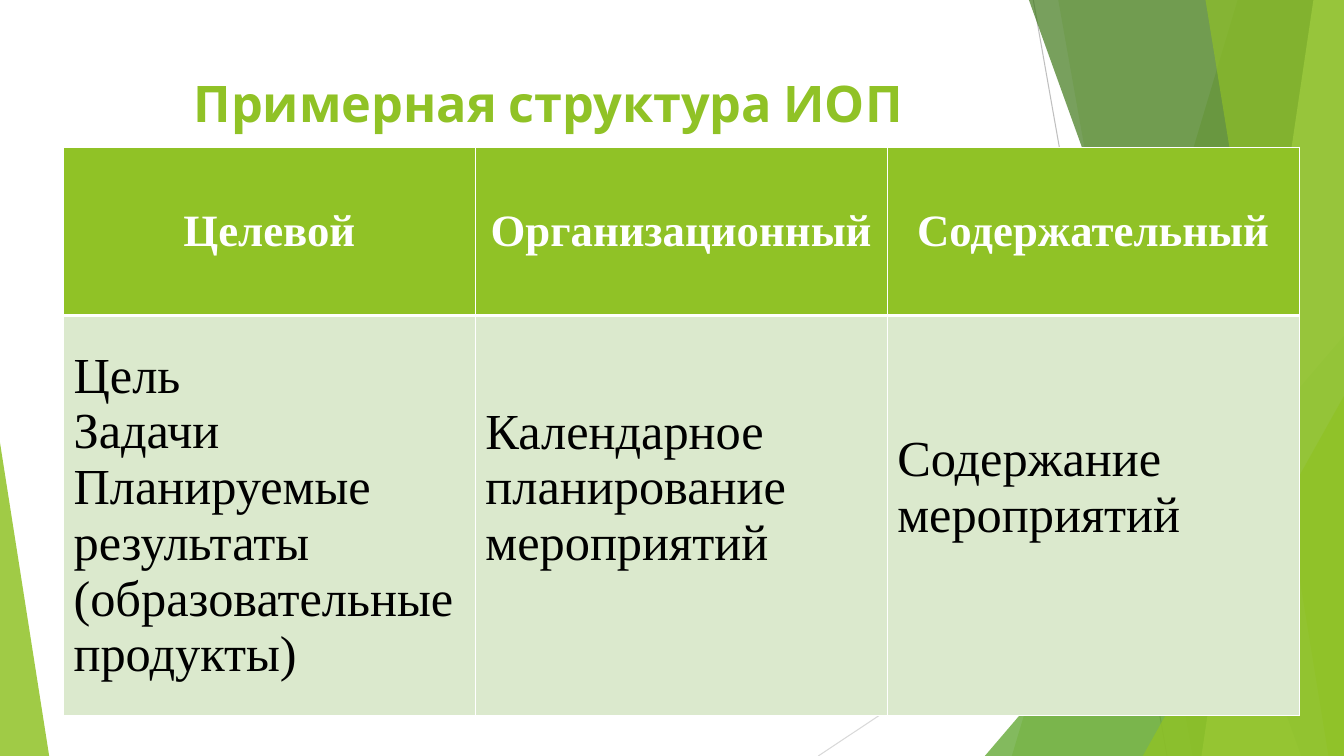
from collections import namedtuple

from lxml.etree import SubElement
from pptx import Presentation
from pptx.dml.color import RGBColor
from pptx.enum.shapes import MSO_CONNECTOR as Connector, MSO_SHAPE as Shape
from pptx.enum.text import MSO_ANCHOR as Anchor, PP_ALIGN as Align
from pptx.oxml.ns import qn
from pptx.util import Cm, Pt

Box = namedtuple("Box", "left top width height")

COLORS = {
    "lime": "90C226", "leaf": "54A021", "forest": "3F7819", "pale": "C0E474",
    "mint": "DBE9CD", "white": "FFFFFF", "black": "000000",
    "gray": "BFBFBF", "silver": "D9D9D9",
}
TITLE_FONT = {"name": "Cabin", "size": Pt(36), "bold": True}
HEADER_FONT = {"name": "Times New Roman", "size": Pt(32), "bold": True}
BODY_FONT = {"name": "Times New Roman", "size": Pt(36), "bold": False}

SECTIONS = [
    ("Целевой", ["Цель", "Задачи",
                 "Планируемые результаты (образовательные продукты)"], 0.13),
    ("Организационный", ["Календарное планирование мероприятий"], 1.52),
    ("Содержательный", ["Содержание мероприятий"], 1.52),
]


def rgb(color):
    """Return the named palette colour."""
    return RGBColor.from_string(COLORS[color])


def format_text(paragraph, font, color, align):
    """Apply a font dict, a colour and an alignment to a paragraph."""
    paragraph.alignment = align
    for key, value in font.items():
        setattr(paragraph.font, key, value)
    paragraph.font.color.rgb = rgb(color)


def paint(facet, color, opacity):
    """Fill a facet with a translucent colour and no outline."""
    facet.shadow.inherit = False
    facet.line.fill.background()
    facet.fill.solid()
    facet.fill.fore_color.rgb = rgb(color)
    tint = facet.fill._xPr.find(qn("a:solidFill"))[0]
    SubElement(tint, qn("a:alpha"), val=str(opacity * 1000))


def add_ray(slide, start, end, color):
    """Draw one thin line across the background."""
    ray = slide.shapes.add_connector(
        Connector.STRAIGHT, *(Cm(value) for value in start + end))
    ray.line.color.rgb = rgb(color)
    ray.line.width = Pt(0.75)
    SubElement(ray._element.spPr, qn("a:effectLst"))


def add_band(slide, box, top_x, bottom_x, color, opacity):
    """Draw a slanted band that reaches the right edge of the box."""
    right, bottom = box.left + box.width, box.top + box.height
    outline = slide.shapes.build_freeform(Cm(top_x), Cm(box.top))
    outline.add_line_segments([(Cm(right), Cm(box.top)), (Cm(right), Cm(bottom)),
                               (Cm(bottom_x), Cm(bottom))])
    paint(outline.convert_to_shape(), color, opacity)


def add_corner(slide, box, apex, color, opacity):
    """Draw a right triangle that fills the box."""
    corner = slide.shapes.add_shape(Shape.ISOSCELES_TRIANGLE, *map(Cm, box))
    corner.adjustments[0] = apex
    paint(corner, color, opacity)


def add_facets(slide, box):
    """Draw the faceted green background in the box."""
    right, bottom = box.left + box.width, box.top + box.height
    add_ray(slide, (26.04, box.top), (29.41, bottom), "gray")
    add_ray(slide, (right, 10.24), (20.62, bottom), "silver")
    add_band(slide, box, 31.19, 25.5, "lime", 30)
    add_band(slide, box, 26.67, 30.05, "lime", 20)
    add_corner(slide, Box(24.82, 8.46, right - 24.82, bottom - 8.46), 1, "leaf", 72)
    add_band(slide, box, 25.93, 32.79, "forest", 70)
    add_band(slide, box, 33.1, 30.28, "pale", 70)
    add_band(slide, box, 30.38, 33.48, "lime", 65)
    add_corner(slide, Box(28.8, 9.98, right - 28.8, bottom - 9.98), 1, "lime", 80)
    add_corner(slide, Box(box.left, 11.15, 1.24, bottom - 11.15), 0, "lime", 85)


def add_heading(slide, box):
    """Place the slide title in the box."""
    heading = slide.shapes.title
    for side, value in box._asdict().items():
        setattr(heading, side, Cm(value))
    heading.text_frame.text = "Примерная структура ИОП"
    heading.text_frame.vertical_anchor = Anchor.TOP
    format_text(heading.text_frame.paragraphs[0], TITLE_FONT, "lime", Align.CENTER)


def style_cell(cell, fill, top, bottom):
    """Give a cell its white borders, fill and middle anchor."""
    properties = cell._tc.get_or_add_tcPr()
    for side, width in {"L": 1, "R": 1, "T": top, "B": bottom}.items():
        border = SubElement(properties, qn(f"a:ln{side}"), w=str(Pt(width)))
        solid = SubElement(border, qn("a:solidFill"))
        SubElement(solid, qn("a:srgbClr"), val=COLORS["white"])
    cell.fill.solid()
    cell.fill.fore_color.rgb = rgb(fill)
    cell.vertical_anchor = Anchor.MIDDLE


def add_structure(slide, box, header_height):
    """Place the table of programme sections in the box."""
    structure = slide.shapes.add_table(2, len(SECTIONS), *map(Cm, box)).table
    structure.rows[0].height = Cm(header_height)
    structure.rows[1].height = Cm(box.height - header_height)
    for index, (section, contents, bottom_margin) in enumerate(SECTIONS):
        structure.columns[index].width = Cm(box.width / len(SECTIONS))
        header, body = structure.cell(0, index), structure.cell(1, index)
        style_cell(header, "lime", 1, 3)
        style_cell(body, "mint", 3, 1)
        header.text = section
        format_text(header.text_frame.paragraphs[0], HEADER_FONT, "white", Align.CENTER)
        body.text = "\n".join(contents)
        body.margin_bottom = Cm(bottom_margin)
        for paragraph in body.text_frame.paragraphs:
            format_text(paragraph, BODY_FONT, "black", Align.LEFT)


def main():
    """Build the slide and save it."""
    presentation = Presentation()
    page = Box(0, 0, 33.87, 19.05)
    presentation.slide_width = Cm(page.width)
    presentation.slide_height = Cm(page.height)
    slide = presentation.slides.add_slide(presentation.slide_layouts[5])
    add_facets(slide, page)
    add_heading(slide, Box(1.88, 1.7, 23.88, 3.66))
    add_structure(slide, Box(1.6, 3.71, 31.14, 14.32), 4.24)
    presentation.save("out.pptx")


if __name__ == "__main__":
    main()
